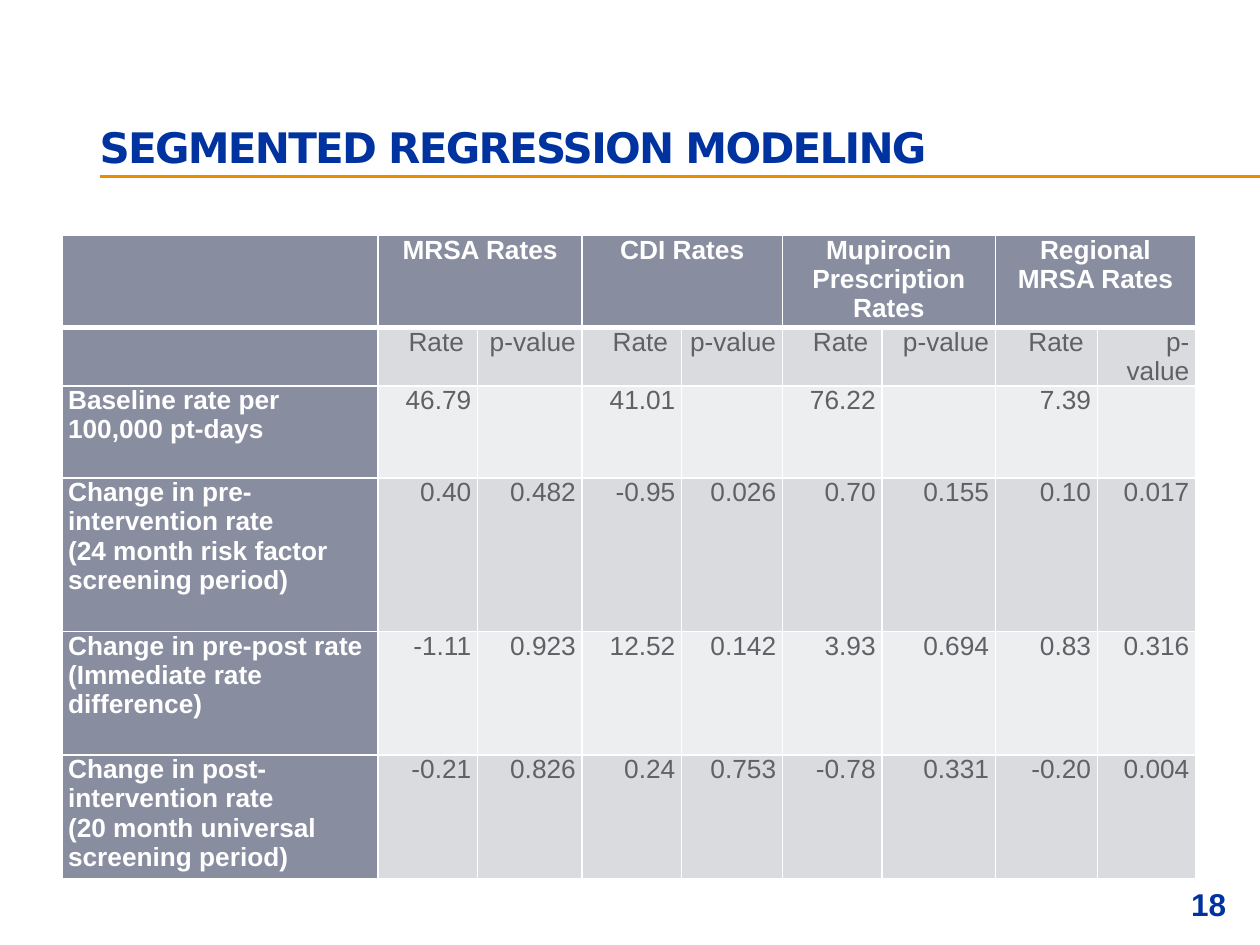
from dataclasses import dataclass

from lxml import etree
from pptx import Presentation
from pptx import util as u
from pptx.dml.color import RGBColor
from pptx.enum import shapes, text
from pptx.oxml import ns


@dataclass(frozen=True)
class Theme:
    blue: str = "0033A0"
    gold: str = "ED8B00"
    slate: str = "898DA0"
    dark: str = "DADBDF"
    light: str = "EDEEF0"
    gray: str = "606164"
    white: str = "FFFFFF"
    sans: str = "Arial"
    head: str = "DejaVu Sans"
    title: int = 24
    cell: int = 15
    page: int = 18


THEME = Theme()
RIGHT = text.PP_ALIGN.RIGHT
MID = text.PP_ALIGN.CENTER
LEFT = text.PP_ALIGN.LEFT

COLS = [2.51, 0.79, 0.83, 0.79, 0.8, 0.79, 0.9, 0.81, 0.78]
ROWS = [0.73, 0.27, 0.73, 1.22, 0.98, 0.98]
GROUPS = ["MRSA Rates", "CDI Rates", "Mupirocin Prescription Rates", "Regional MRSA Rates"]
BODY = [
    [""] + ["Rate ", "p-value"] * len(GROUPS),
    ["Baseline rate per 100,000 pt-days", "46.79", "", "41.01", "", "76.22", "", "7.39", ""],
    ["Change in pre-intervention rate\n(24 month risk factor screening period)",
     "0.40", "0.482", "-0.95", "0.026", "0.70", "0.155", "0.10", "0.017"],
    ["Change in pre-post rate\n(Immediate rate difference)",
     "-1.11", "0.923", "12.52", "0.142", "3.93", "0.694", "0.83", "0.316"],
    ["Change in post-intervention rate\n(20 month universal screening period)",
     "-0.21", "0.826", "0.24", "0.753", "-0.78", "0.331", "-0.20", "0.004"],
]


def put(obj, vals):
    for key, val in vals.items():
        setattr(obj, key, val)


def write(frame, words, size, color, face, bold=True, align=LEFT):
    frame.text = words
    for para in frame.paragraphs:
        para.alignment = align
        for run in para.runs:
            put(run.font, {"size": u.Pt(size), "name": face, "bold": bold})
            run.font.color.rgb = RGBColor.from_string(color)


def inset(frame, left, top, right, low):
    put(frame, {"margin_left": u.Inches(left), "margin_top": u.Inches(top),
                "margin_right": u.Inches(right), "margin_bottom": u.Inches(low)})


def edge(cell, side, width):
    line = etree.SubElement(cell._tc.get_or_add_tcPr(), ns.qn("a:ln" + side), w=str(u.Pt(width)))
    fill = etree.SubElement(line, ns.qn("a:solidFill"))
    etree.SubElement(fill, ns.qn("a:srgbClr"), val=THEME.white)


def style(cell, row, fill):
    inset(cell, 0.05, 0, 0.05, 0)
    widths = {"L": 1, "R": 1, "T": 3 if row == 1 else 1, "B": 3 if row == 0 else 1}
    for side, width in widths.items():
        edge(cell, side, width)
    cell.fill.solid()
    cell.fill.fore_color.rgb = RGBColor.from_string(fill)


def add_title(slide, words):
    title = slide.shapes.title
    put(title, {"left": u.Inches(0.79), "top": u.Inches(0.61),
                "width": u.Inches(8.5), "height": u.Inches(0.79)})
    frame = title.text_frame
    write(frame, words, THEME.title, THEME.blue, THEME.head)
    put(frame, {"vertical_anchor": text.MSO_ANCHOR.BOTTOM, "word_wrap": True,
                "auto_size": text.MSO_AUTO_SIZE.NONE})
    inset(frame, 0, 0, 0, 0.04)
    para = frame.paragraphs[0]
    para.line_spacing = 0.8
    para.runs[0].font._element.set("spc", "-100")


def add_rule(slide):
    y = u.Inches(1.4)
    rule = slide.shapes.add_connector(shapes.MSO_CONNECTOR.STRAIGHT,
                                      u.Inches(0.79), y, u.Inches(10), y)
    rule.line.color.rgb = RGBColor.from_string(THEME.gold)
    rule.line.width = u.Pt(2)
    etree.SubElement(rule.element.spPr, ns.qn("a:effectLst"))


def add_rates(slide):
    grid = slide.shapes.add_table(len(ROWS), len(COLS), u.Inches(0.49), u.Inches(1.87),
                                  u.Inches(sum(COLS)), u.Inches(sum(ROWS))).table
    for col, width in zip(grid.columns, COLS):
        col.width = u.Inches(width)
    for row, height in zip(grid.rows, ROWS):
        row.height = u.Inches(height)
    for c in range(len(COLS)):
        style(grid.cell(0, c), 0, THEME.slate)
    for n, name in enumerate(GROUPS):
        start = 2 * n + 1
        cell = grid.cell(0, start)
        cell.merge(grid.cell(0, start + 1))
        write(cell.text_frame, name, THEME.cell, THEME.white, THEME.sans, align=MID)
    for r, vals in enumerate(BODY, 1):
        band = THEME.dark if r % 2 else THEME.light
        for c, val in enumerate(vals):
            cell = grid.cell(r, c)
            label = c == 0
            style(cell, r, THEME.slate if label else band)
            write(cell.text_frame, val, THEME.cell, THEME.white if label else THEME.gray,
                  THEME.sans, label, LEFT if label else RIGHT)


def add_page(slide, num):
    box = slide.shapes.add_textbox(u.Inches(9.06), u.Inches(6.91), u.Inches(0.77), u.Inches(0.53))
    frame = box.text_frame
    put(frame, {"word_wrap": True, "vertical_anchor": text.MSO_ANCHOR.MIDDLE})
    write(frame, num, THEME.page, THEME.blue, THEME.sans, align=RIGHT)


def main():
    deck = Presentation()
    put(deck, {"slide_width": u.Inches(10), "slide_height": u.Inches(7.5)})
    slide = deck.slides.add_slide(deck.slide_layouts[5])
    add_rule(slide)
    add_title(slide, "SEGMENTED REGRESSION MODELING")
    add_rates(slide)
    add_page(slide, "18")
    deck.save("out.pptx")


if __name__ == "__main__":
    main()
